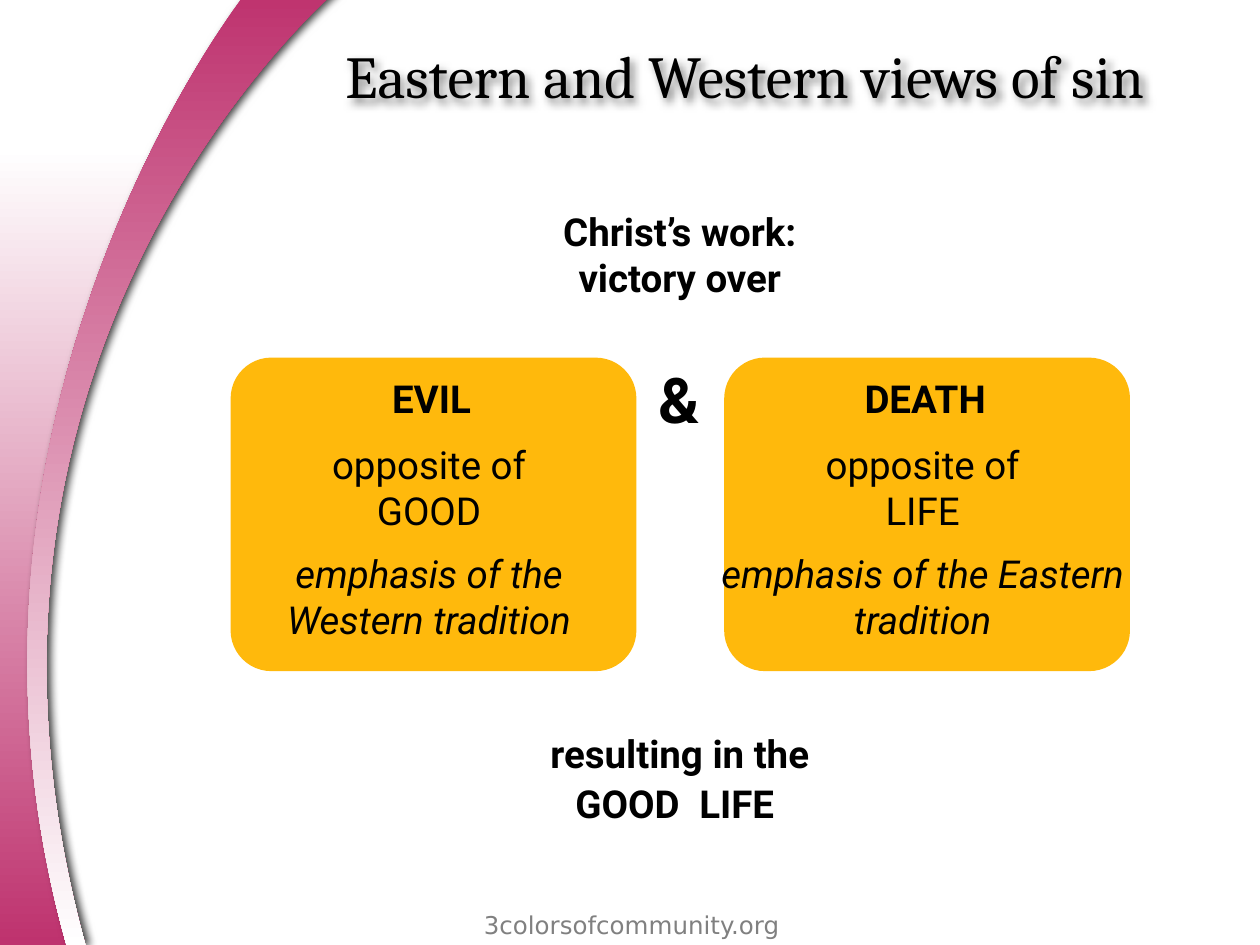
import pptx
import pptx.dml.color
import pptx.enum.shapes
import pptx.enum.text
import pptx.oxml
import pptx.oxml.ns
import pptx.util
import lxml.etree

Cm = pptx.util.Cm
ALIGN = pptx.enum.text.PP_ALIGN
ANCHOR = pptx.enum.text.MSO_ANCHOR
SHADOW = (
    '<a:effectLst xmlns:a="http://schemas.openxmlformats.org/drawingml/2006/main">'
    '<a:outerShdw blurRad="63500" dist="38100" dir="{}" algn="tl" rotWithShape="0">'
    '<a:srgbClr val="000000"><a:alpha val="{}"/></a:srgbClr></a:outerShdw></a:effectLst>'
)


def color(hex_value):
    return pptx.dml.color.RGBColor.from_string(hex_value)


def add_text(left, top, width, height, lines, size=22, bold=False, italic=False,
             align=ALIGN.CENTER, anchor=ANCHOR.MIDDLE, font="Roboto", ink="000000", inset=0):
    frame = slide.shapes.add_textbox(Cm(left), Cm(top), Cm(width), Cm(height)).text_frame
    frame.word_wrap = True
    frame.vertical_anchor = anchor
    frame.margin_left = frame.margin_right = frame.margin_top = frame.margin_bottom = Cm(inset)
    for number, line in enumerate(lines):
        paragraph = frame.add_paragraph() if number else frame.paragraphs[0]
        paragraph.alignment = align
        run = paragraph.add_run()
        run.text = line
        run.font.name = font
        run.font.size = pptx.util.Pt(size)
        run.font.bold = bold
        run.font.italic = italic
        run.font.color.rgb = color(ink)


presentation = pptx.Presentation()
presentation.slide_width = Cm(25.4)
presentation.slide_height = Cm(19.05)
slide = presentation.slides.add_slide(presentation.slide_layouts[5])
slide.background.fill.solid()
slide.background.fill.fore_color.rgb = color("FFFFFF")

# Left decoration: after the start, one point is a line and three points are a Bezier curve
side_panel = [
    [(0, 2.97)],
    [(1.65, 2.97), (1.04, 2.97), (3.84, 2.97)],
    [(-0.89, 10.97), (1.27, 17.5), (1.65, 19.05)],
    [(0.81, 19.05), (0, 19.05), (0, 19.05)],
    [(-0.28, 16.36), (0, 2.97), (0, 2.97)],
]
ribbon = [
    [(1.35, 19.08)],
    [(1.55, 19.08), (1.73, 19.08), (1.73, 19.08)],
    [(-1.63, 6.93), (6.78, -0.18), (6.78, -0.18)],
    [(5, -0.2)],
    [(5, -0.2), (-1.7, 8.28), (1.35, 19.08)],
]
for outline, top_color, bottom_color, has_shadow in (
    (side_panel, "FFFFFF", "BE326E", False),
    (ribbon, "BE326E", "FFFFFF", True),
):
    points = [(Cm(x), Cm(y)) for segment in outline for x, y in segment]
    builder = slide.shapes.build_freeform(*points[0])
    builder.add_line_segments(points[1:], close=True)
    curve = builder.convert_to_shape()

    # Join each three line steps of a curve into one Bezier step
    steps = list(curve._element.iter(pptx.oxml.ns.qn("a:lnTo")))
    for segment in outline[1:]:
        segment_steps, steps = steps[:len(segment)], steps[len(segment):]
        if len(segment) == 3:
            bezier = lxml.etree.Element(pptx.oxml.ns.qn("a:cubicBezTo"))
            segment_steps[0].addprevious(bezier)
            for step in segment_steps:
                bezier.append(step[0])
                step.getparent().remove(step)

    curve.line.fill.background()
    curve.fill.gradient()
    curve.fill.gradient_angle = 270
    for stop, stop_color in zip(curve.fill.gradient_stops, (top_color, bottom_color)):
        stop.color.rgb = color(stop_color)
    if has_shadow:
        curve._element.spPr.append(pptx.oxml.parse_xml(SHADOW.format(0, 75000)))
    else:
        curve.shadow.inherit = False

# Title
title = slide.shapes.title
title.left, title.top, title.width, title.height = Cm(6.71), Cm(0), Cm(18.69), Cm(3.02)
title.fill.background()
title._element.spPr.append(pptx.oxml.parse_xml(SHADOW.format(2700000, 50000)))
title.text_frame.vertical_anchor = ANCHOR.MIDDLE
heading = title.text_frame.paragraphs[0]
heading.alignment = ALIGN.LEFT
heading_run = heading.add_run()
heading_run.text = "Eastern and Western views of sin"
heading_run.font.name = "Cambria"
heading_run.font.size = pptx.util.Pt(34)
heading_run.font.color.rgb = color("000000")

# Footer
add_text(8.71, 18.21, 8.05, 0.84, ["3colorsofcommunity.org"], size=14,
         anchor=ANCHOR.TOP, font="DejaVu Sans", ink="808080", inset=0.13)

# Opening statement
add_text(9.5, 4.12, 8.41, 2.01, ["Christ’s work:", "victory over"], bold=True)

# Two cards joined by an ampersand
for card_left, enemy, opposite, tradition in (
    (4.65, "EVIL", "GOOD", "Western"),
    (14.6, "DEATH", "LIFE", "Eastern"),
):
    card = slide.shapes.add_shape(pptx.enum.shapes.MSO_SHAPE.ROUNDED_RECTANGLE,
                                  Cm(card_left), Cm(7.21), Cm(8.18), Cm(6.32))
    card.adjustments[0] = 0.13
    card.shadow.inherit = False
    card.fill.solid()
    card.fill.fore_color.rgb = color("FFB90C")
    card.line.fill.background()
    add_text(card_left - 0.05, 7.52, 8.2, 1.02, [enemy], bold=True)
    add_text(card_left - 0.1, 9.31, 8.2, 1.02, ["opposite of", opposite])
    add_text(card_left - 0.1, 11.51, 8.2, 1.02, [f"emphasis of the {tradition} tradition"],
             italic=True)
add_text(12.69, 7.52, 2.01, 1.02, ["&"], size=36, bold=True)

# Result
for left, top, width, line, align in (
    (9.5, 14.72, 8.41, "resulting in the", ALIGN.CENTER),
    (7.7, 15.72, 6, "GOOD", ALIGN.RIGHT),
    (14.1, 15.72, 6, "LIFE", ALIGN.LEFT),
):
    add_text(left, top, width, 1.2, [line], bold=True, align=align, anchor=ANCHOR.TOP)

presentation.save("out.pptx")
